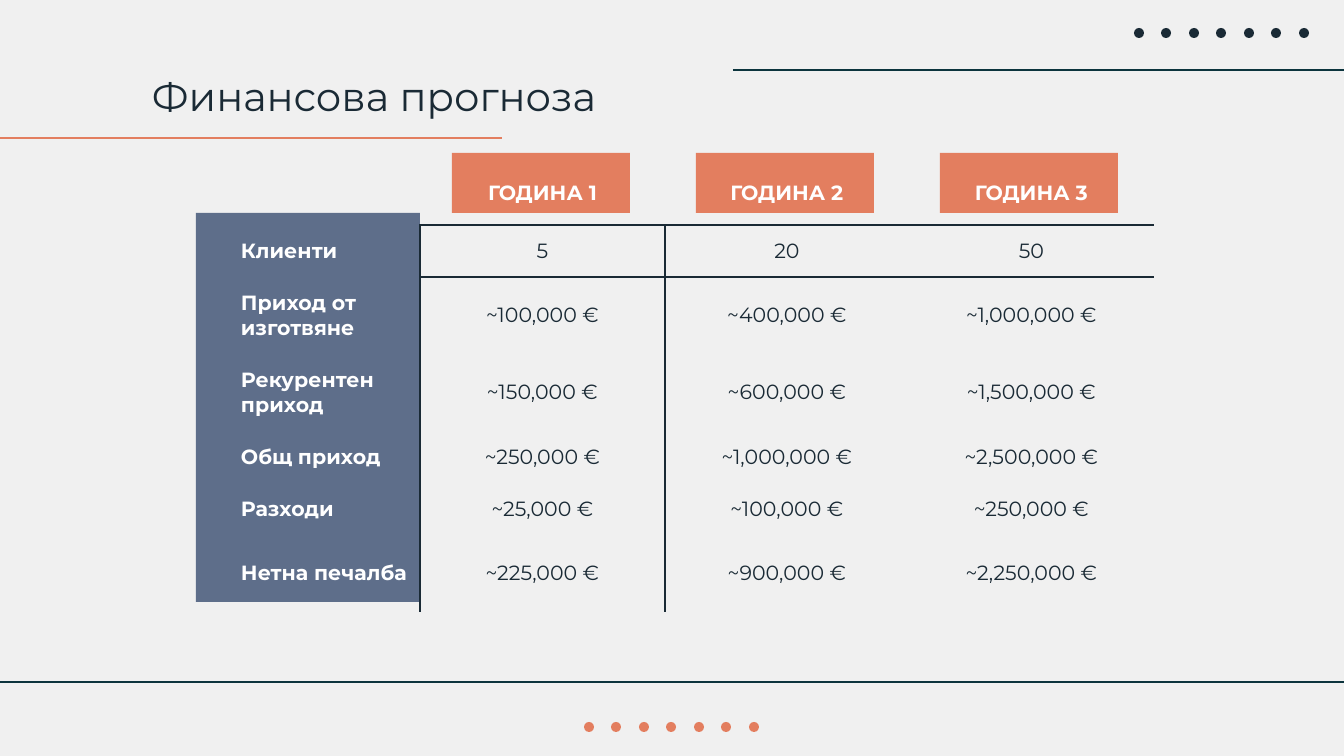
from lxml.etree import SubElement
from pptx import Presentation
from pptx.dml.color import RGBColor
from pptx.enum.shapes import MSO_CONNECTOR as CONN, MSO_SHAPE as SHAPE
from pptx.enum.text import MSO_ANCHOR as ANCHOR, PP_ALIGN as ALIGN
from pptx.oxml import parse_xml
from pptx.oxml.ns import nsdecls, qn
from pptx.util import Pt

COLORS = {"bg": "F0F0F0", "ink": "1A2A35", "teal": "0C343D",
          "coral": "E37E5F", "slate": "5E6E8A", "white": "FFFFFF"}
FONT = "Montserrat"
SCALE = 914400 / 134.4
NO_STYLE = "{2D5ABB26-0587-4C30-8999-92F81FD0307C}"
INSET = 13

ROWS = [
    ["", "ГОДИНА 1", "ГОДИНА 2", "ГОДИНА 3"],
    ["Клиенти", "5", "20", "50"],
    ["Приход от изготвяне", "~100,000 €", "~400,000 €", "~1,000,000 €"],
    ["Рекурентен приход", "~150,000 €", "~600,000 €", "~1,500,000 €"],
    ["Общ приход", "~250,000 €", "~1,000,000 €", "~2,500,000 €"],
    ["Разходи", "~25,000 €", "~100,000 €", "~250,000 €"],
    ["Нетна печалба", "~225,000 €", "~900,000 €", "~2,250,000 €"],
]
COL_WIDTHS = [192, 245, 244, 245]
ROW_HEIGHTS = [64, 52, 77, 77, 52, 52, 77]


def px(n):
    return round(n * SCALE)


def rgb(name):
    return RGBColor.from_string(COLORS[name])


def write(tf, text, size=11, color="ink", bold=False, align=ALIGN.LEFT):
    tf.word_wrap = True
    p = tf.paragraphs[0]
    p.alignment = align
    if not text:
        SubElement(p._p, qn("a:endParaRPr"), sz=str(size * 100))
        return
    r = p.add_run()
    r.text = text
    r.font.name, r.font.size, r.font.bold = FONT, Pt(size), bold
    r.font.color.rgb = rgb(color)


def set_insets(target):
    target.margin_left = target.margin_right = px(INSET)
    target.margin_top = target.margin_bottom = px(INSET)


class Deck:
    def __init__(self, prs):
        self.s = prs.slides.add_slide(prs.slide_layouts[6])
        fill = self.s.background.fill
        fill.solid()
        fill.fore_color.rgb = rgb("bg")

    def shape(self, x, y, w, h, color, kind=SHAPE.RECTANGLE):
        sp = self.s.shapes.add_shape(kind, px(x), px(y), px(w), px(h))
        sp.shadow.inherit = False
        sp.fill.solid()
        sp.fill.fore_color.rgb = rgb(color)
        sp.line.fill.background()

    def dots(self, x, y, color):
        for i in range(7):
            self.shape(x + 55 * i // 2, y, 10, 10, color, SHAPE.OVAL)

    def rule(self, x1, x2, y, color):
        ln = self.s.shapes.add_connector(CONN.STRAIGHT, px(x1), px(y), px(x2), px(y))
        ln.line.color.rgb = rgb(color)
        ln.line.width = Pt(0.75)
        SubElement(ln._element.spPr, qn("a:effectLst"))

    def text(self, x, y, w, h, text, **fmt):
        tf = self.s.shapes.add_textbox(px(x), px(y), px(w), px(h)).text_frame
        set_insets(tf)
        write(tf, text, **fmt)

    def border(self, cell, sides):
        for i, side in enumerate(sides):
            ln = parse_xml(
                f'<a:ln{side} {nsdecls("a")} w="{Pt(0.75)}"><a:solidFill>'
                f'<a:srgbClr val="{COLORS["ink"]}"/></a:solidFill></a:ln{side}>')
            cell._tc.get_or_add_tcPr().insert(i, ln)

    def table(self, x, y, rows, widths, heights):
        frame = self.s.shapes.add_table(len(rows), len(widths), px(x), px(y),
                                        px(sum(widths)), px(sum(heights)))
        tbl = frame.table
        tbl.first_row = tbl.horz_banding = False
        tbl._tbl.tblPr.find(qn("a:tableStyleId")).text = NO_STYLE
        for col, w in zip(tbl.columns, widths):
            col.width = px(w)
        for i, (values, h) in enumerate(zip(rows, heights)):
            tbl.rows[i].height = px(h)
            for j, value in enumerate(values):
                cell = tbl.cell(i, j)
                set_insets(cell)
                cell.vertical_anchor = ANCHOR.MIDDLE
                cell.fill.background()
                head = i == 0 or j == 0
                write(cell.text_frame, value, bold=head,
                      color="white" if head else "ink",
                      align=ALIGN.CENTER if j else ALIGN.LEFT)
                sides = [("L", j == 1 and i > 0), ("R", j == 0 and i > 0),
                         ("T", i == 1 and j > 0), ("B", i == 0 and j > 0)]
                self.border(cell, [side for side, drawn in sides if drawn])


def main():
    prs = Presentation()
    prs.slide_width, prs.slide_height = px(1344), px(756)
    deck = Deck(prs)
    deck.rule(0, 1344, 682, "teal")
    deck.dots(584, 722, "coral")
    deck.rule(733, 1344, 70, "teal")
    deck.dots(1134, 28, "ink")
    deck.shape(196, 213, 224, 389, "slate")
    for i in range(3):
        deck.shape(452 + 244 * i, 153, 178, 60, "coral")
    deck.table(228, 161, ROWS, COL_WIDTHS, ROW_HEIGHTS)
    deck.text(139, 58, 663, 72, "Финансова прогноза", size=21.5)
    deck.rule(0, 502, 138, "coral")
    prs.save("out.pptx")


if __name__ == "__main__":
    main()
